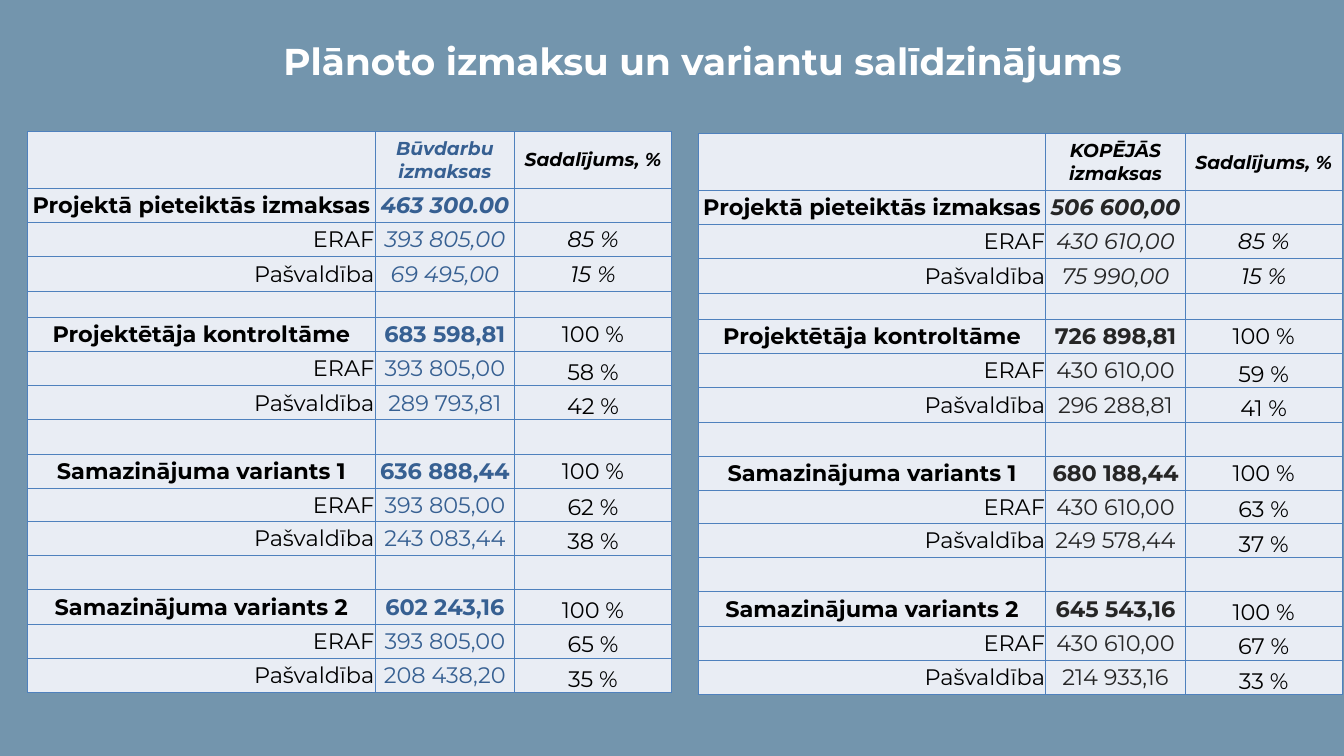
import dataclasses
import typing

import pptx
import pptx.dml.color
import pptx.enum.text
import pptx.oxml
import pptx.oxml.ns
import pptx.util

PX_PER_INCH = 100
FONT = "Montserrat"
BLACK = "000000"
BORDER = "4F81BD"
CELL_FILL = "E9EDF4"
ALIGN = pptx.enum.text.PP_ALIGN
ANCHOR = pptx.enum.text.MSO_ANCHOR
COLUMN_WIDTHS = (517, 208, 233)
ROW_HEIGHTS = (84, 51, 51, 51, 39, 51, 51, 51, 51, 51, 49, 51, 51, 51, 51, 51)
CELL_MARGINS = {"margin_left": 1, "margin_top": 1, "margin_right": 1, "margin_bottom": 0}


@dataclasses.dataclass(frozen=True)
class Variant:
    name: str
    italic: bool = False
    total_share: str = "100 %"
    total_anchor: ANCHOR = ANCHOR.MIDDLE
    part_anchor: ANCHOR = ANCHOR.BOTTOM


@dataclasses.dataclass(frozen=True)
class Costs:
    amounts: tuple[str, str, str]
    shares: tuple[str, str]


@dataclasses.dataclass(frozen=True)
class CostTable:
    left: int
    top: int
    heading: str
    heading_color: str
    amount_color: str
    costs: tuple[Costs, ...]


@dataclasses.dataclass(frozen=True)
class CellText:
    text: str
    color: str = BLACK
    size: int = 24
    bold: bool = False
    italic: bool = False
    align: ALIGN = ALIGN.CENTER
    anchor: ANCHOR = ANCHOR.MIDDLE


VARIANTS = (
    Variant("Projektā pieteiktās izmaksas", italic=True, total_share="", part_anchor=ANCHOR.MIDDLE),
    Variant("Projektētāja kontroltāme"),
    Variant("Samazinājuma variants 1"),
    Variant("Samazinājuma variants 2", total_anchor=ANCHOR.BOTTOM),
)
TABLES = (
    CostTable(41, 196, "Būvdarbu izmaksas", "376092", "376092", (
        Costs(("463 300.00", "393 805,00", "69 495,00"), ("85 %", "15 %")),
        Costs(("683 598,81", "393 805,00", "289 793,81"), ("58 %", "42 %")),
        Costs(("636 888,44", "393 805,00", "243 083,44"), ("62 %", "38 %")),
        Costs(("602 243,16", "393 805,00", "208 438,20"), ("65 %", "35 %")),
    )),
    CostTable(1039, 199, "KOPĒJĀS izmaksas", BLACK, "262626", (
        Costs(("506 600,00", "430 610,00", "75 990,00"), ("85 %", "15 %")),
        Costs(("726 898,81", "430 610,00", "296 288,81"), ("59 %", "41 %")),
        Costs(("680 188,44", "430 610,00", "249 578,44"), ("63 %", "37 %")),
        Costs(("645 543,16", "430 610,00", "214 933,16"), ("67 %", "33 %")),
    )),
)


def px(length: int) -> int:
    return pptx.util.Emu(length * pptx.util.Inches(1) // PX_PER_INCH)


def rgb(color: str) -> pptx.dml.color.RGBColor:
    return pptx.dml.color.RGBColor.from_string(color)


def write_text(para: typing.Any, content: CellText) -> None:
    para.alignment = content.align
    span = para.add_run()
    span.text = content.text
    font_format = {
        "name": FONT,
        "size": pptx.util.Pt(content.size),
        "bold": content.bold,
        "italic": content.italic,
    }
    for name, value in font_format.items():
        setattr(span.font, name, value)
    span.font.color.rgb = rgb(content.color)


def add_borders(cell: typing.Any) -> None:
    properties = cell._tc.get_or_add_tcPr()
    for position, side in enumerate(("lnL", "lnR", "lnT", "lnB")):
        line = pptx.oxml.parse_xml(
            f'<a:{side} {pptx.oxml.ns.nsdecls("a")} w="{pptx.util.Pt(1)}">'
            f'<a:solidFill><a:srgbClr val="{BORDER}"/></a:solidFill></a:{side}>'
        )
        properties.insert(position, line)


def variant_rows(variant: Variant, costs: Costs, color: str) -> list[list[CellText]]:
    total, *parts = costs.amounts
    rows = [[
        CellText(variant.name, bold=True),
        CellText(total, color, bold=True, italic=variant.italic),
        CellText(variant.total_share, anchor=variant.total_anchor),
    ]]
    for label, amount, share in zip(("ERAF", "Pašvaldība"), parts, costs.shares):
        rows.append([
            CellText(label, align=ALIGN.RIGHT),
            CellText(amount, color, italic=variant.italic),
            CellText(share, italic=variant.italic, anchor=variant.part_anchor),
        ])
    return rows


def table_rows(table: CostTable) -> list[list[CellText]]:
    blank = CellText("")
    rows = [[
        blank,
        CellText(table.heading, table.heading_color, 20, bold=True, italic=True),
        CellText("Sadalījums, %", size=20, bold=True, italic=True),
    ]]
    for variant, costs in zip(VARIANTS, table.costs):
        if len(rows) > 1:
            rows.append([blank] * len(COLUMN_WIDTHS))
        rows.extend(variant_rows(variant, costs, table.amount_color))
    return rows


def fill_cell(cell: typing.Any, content: CellText) -> None:
    for name, value in CELL_MARGINS.items():
        setattr(cell, name, px(value))
    cell.vertical_anchor = content.anchor
    cell.fill.solid()
    cell.fill.fore_color.rgb = rgb(CELL_FILL)
    add_borders(cell)
    if content.text:
        write_text(cell.text_frame.paragraphs[0], content)


def draw_table(page: typing.Any, table: CostTable) -> None:
    grid = page.shapes.add_table(
        len(ROW_HEIGHTS), len(COLUMN_WIDTHS), px(table.left), px(table.top),
        px(sum(COLUMN_WIDTHS)), px(sum(ROW_HEIGHTS)),
    ).table
    grid.first_row = False
    grid.horz_banding = False
    for column, width in zip(grid.columns, COLUMN_WIDTHS):
        column.width = px(width)
    for row, height, contents in zip(grid.rows, ROW_HEIGHTS, table_rows(table)):
        row.height = px(height)
        for cell, content in zip(row.cells, contents):
            fill_cell(cell, content)


def draw_title(page: typing.Any) -> None:
    box = page.shapes.add_textbox(px(233), px(27), px(1625), px(125))
    frame = box.text_frame
    frame.word_wrap = True
    frame.vertical_anchor = ANCHOR.MIDDLE
    title = CellText("Plānoto izmaksu un variantu salīdzinājums", "FFFFFF", 40, bold=True)
    write_text(frame.paragraphs[0], title)


def main() -> None:
    deck = pptx.Presentation()
    deck.slide_width = px(2000)
    deck.slide_height = px(1125)
    page = deck.slides.add_slide(deck.slide_layouts[6])
    page.background.fill.solid()
    page.background.fill.fore_color.rgb = rgb("7395AD")
    draw_title(page)
    for table in TABLES:
        draw_table(page, table)
    deck.save("out.pptx")


if __name__ == "__main__":
    main()
